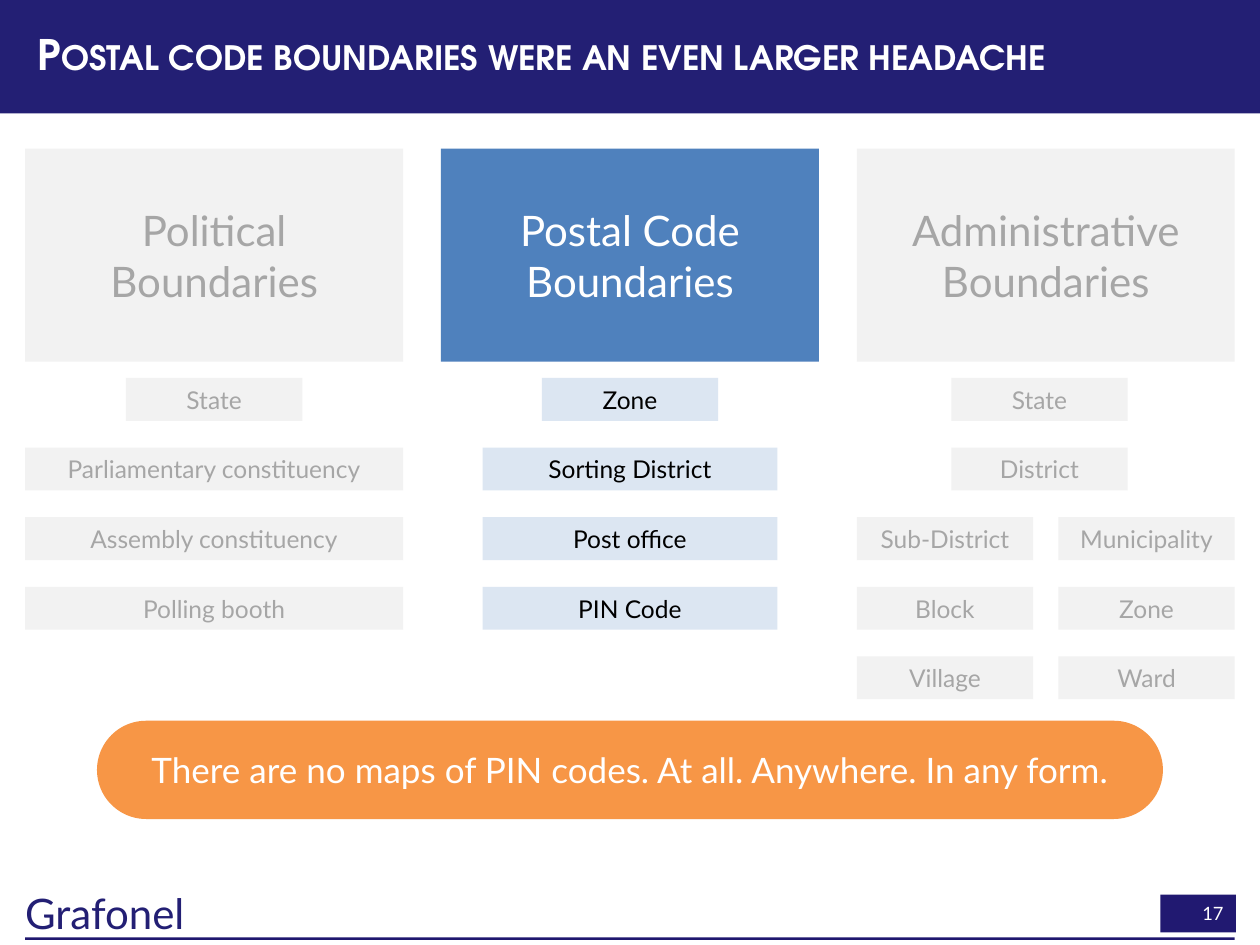
from dataclasses import dataclass

from pptx import Presentation
from pptx.dml.color import RGBColor
from pptx.enum.shapes import MSO_SHAPE
from pptx.enum.text import MSO_ANCHOR, PP_ALIGN
from pptx.oxml.ns import qn
from pptx.util import Inches, Pt

BODY_FONT, TITLE_FONT = "Lato", "TeX Gyre Adventor"
NAVY, WHITE, BLACK, GREY, PALE_GREY = "231F74", "FFFFFF", "000000", "A6A6A6", "F2F2F2"
BLUE, PALE_BLUE, ORANGE = "4F81BD", "DCE6F2", "F79646"

MARGIN, COLUMN_WIDTH, COLUMN_GAP = 0.2, 3, 0.3
HEADING_TOP, HEADING_HEIGHT = 1.18, 1.69
FIRST_ROW, LAST_ROW, ROW_COUNT, LEVEL_HEIGHT = 3, 5.21, 5, 0.34
ROW_PITCH = (LAST_ROW - FIRST_ROW) / (ROW_COUNT - 1)
NARROW, MEDIUM = 1.4, 2.34


@dataclass
class Level:
    """One label; left is measured from the left edge of its column."""
    text: str
    row: int
    left: float
    width: float


@dataclass
class Column:
    heading: str
    levels: list[Level]
    heading_fill: str = PALE_GREY
    heading_color: str = GREY
    level_fill: str = PALE_GREY
    level_color: str = GREY


def centred(text: str, row: int, width: float) -> Level:
    return Level(text, row, (COLUMN_WIDTH - width) / 2, width)


POLITICAL = Column("Political Boundaries", [
    centred("State", 0, NARROW),
    centred("Parliamentary constituency", 1, COLUMN_WIDTH),
    centred("Assembly constituency", 2, COLUMN_WIDTH),
    centred("Polling booth", 3, COLUMN_WIDTH),
])
POSTAL = Column("Postal Code Boundaries", [
    centred("Zone", 0, NARROW),
    centred("Sorting District", 1, MEDIUM),
    centred("Post office", 2, MEDIUM),
    centred("PIN Code", 3, MEDIUM),
], BLUE, WHITE, PALE_BLUE, BLACK)
RURAL = ["Sub-District", "Block", "Village"]
URBAN = ["Municipality", "Zone", "Ward"]
ADMINISTRATIVE = Column("Administrative Boundaries", [
    Level("State", 0, 0.75, NARROW),
    Level("District", 1, 0.75, NARROW),
    *[Level(text, row, 0, NARROW) for row, text in enumerate(RURAL, 2)],
    *[Level(text, row, COLUMN_WIDTH - NARROW, NARROW) for row, text in enumerate(URBAN, 2)],
])


def rgb(value: str) -> RGBColor:
    return RGBColor.from_string(value)


def add_text(shape, text: str, size: float, color: str, align=PP_ALIGN.CENTER,
             font: str = BODY_FONT, bold: bool = False):
    frame = shape.text_frame
    frame.word_wrap = True
    frame.vertical_anchor = MSO_ANCHOR.MIDDLE
    para = frame.paragraphs[0]
    para.alignment = align
    span = para.add_run()
    span.text = text
    span.font.name, span.font.size, span.font.bold = font, Pt(size), bold
    span.font.color.rgb = rgb(color)
    return para


def add_box(page, left: float, top: float, width: float, height: float, fill: str,
            kind=MSO_SHAPE.RECTANGLE):
    box = page.shapes.add_shape(kind, Inches(left), Inches(top), Inches(width), Inches(height))
    box.shadow.inherit = False
    box.fill.solid()
    box.fill.fore_color.rgb = rgb(fill)
    box.line.fill.background()
    return box


def add_title(page, text: str) -> None:
    band = add_box(page, 0, 0, 10, 0.9, NAVY)
    title = page.shapes.title
    title.element.addprevious(band.element)
    title.left, title.top = Inches(MARGIN), Inches(0.1)
    title.width, title.height = Inches(9.6), Inches(0.7)
    para = add_text(title, text, 24, WHITE, PP_ALIGN.LEFT, TITLE_FONT, bold=True)
    para.line_spacing = 0.9
    for properties in title.element.iter(qn("a:rPr")):
        properties.set("cap", "small")


def add_footer(page, name: str, number: str) -> None:
    add_text(add_box(page, 9.21, 7.1, 0.6, 0.3, "211971"), number, 10.5, WHITE, PP_ALIGN.RIGHT)
    add_box(page, MARGIN, 7.44, 9.6, 0.02, "20186F")
    box = page.shapes.add_textbox(Inches(MARGIN), Inches(7.04), Inches(1.77), Inches(0.4))
    frame = box.text_frame
    frame.margin_left = frame.margin_top = frame.margin_right = frame.margin_bottom = 0
    add_text(box, name, 24, NAVY, PP_ALIGN.LEFT)


def add_column(page, column: Column, left: float) -> None:
    heading = add_box(page, left, HEADING_TOP, COLUMN_WIDTH, HEADING_HEIGHT, column.heading_fill)
    add_text(heading, column.heading, 24, column.heading_color)
    for level in column.levels:
        top = FIRST_ROW + level.row * ROW_PITCH
        box = add_box(page, left + level.left, top, level.width, LEVEL_HEIGHT, column.level_fill)
        add_text(box, level.text, 14, column.level_color)


def main() -> None:
    deck = Presentation()
    deck.slide_width, deck.slide_height = Inches(10), Inches(7.5)
    page = deck.slides.add_slide(deck.slide_layouts[5])
    add_title(page, "Postal code boundaries were an even larger headache")
    add_footer(page, "Grafonel", "17")
    for index, column in enumerate([POLITICAL, POSTAL, ADMINISTRATIVE]):
        add_column(page, column, MARGIN + index * (COLUMN_WIDTH + COLUMN_GAP))
    callout = add_box(page, 0.77, 5.72, 8.46, 0.78, ORANGE, MSO_SHAPE.ROUNDED_RECTANGLE)
    callout.adjustments[0] = 0.5
    add_text(callout, "There are no maps of PIN codes. At all. Anywhere. In any form.", 20, WHITE)
    deck.save("out.pptx")


if __name__ == "__main__":
    main()
